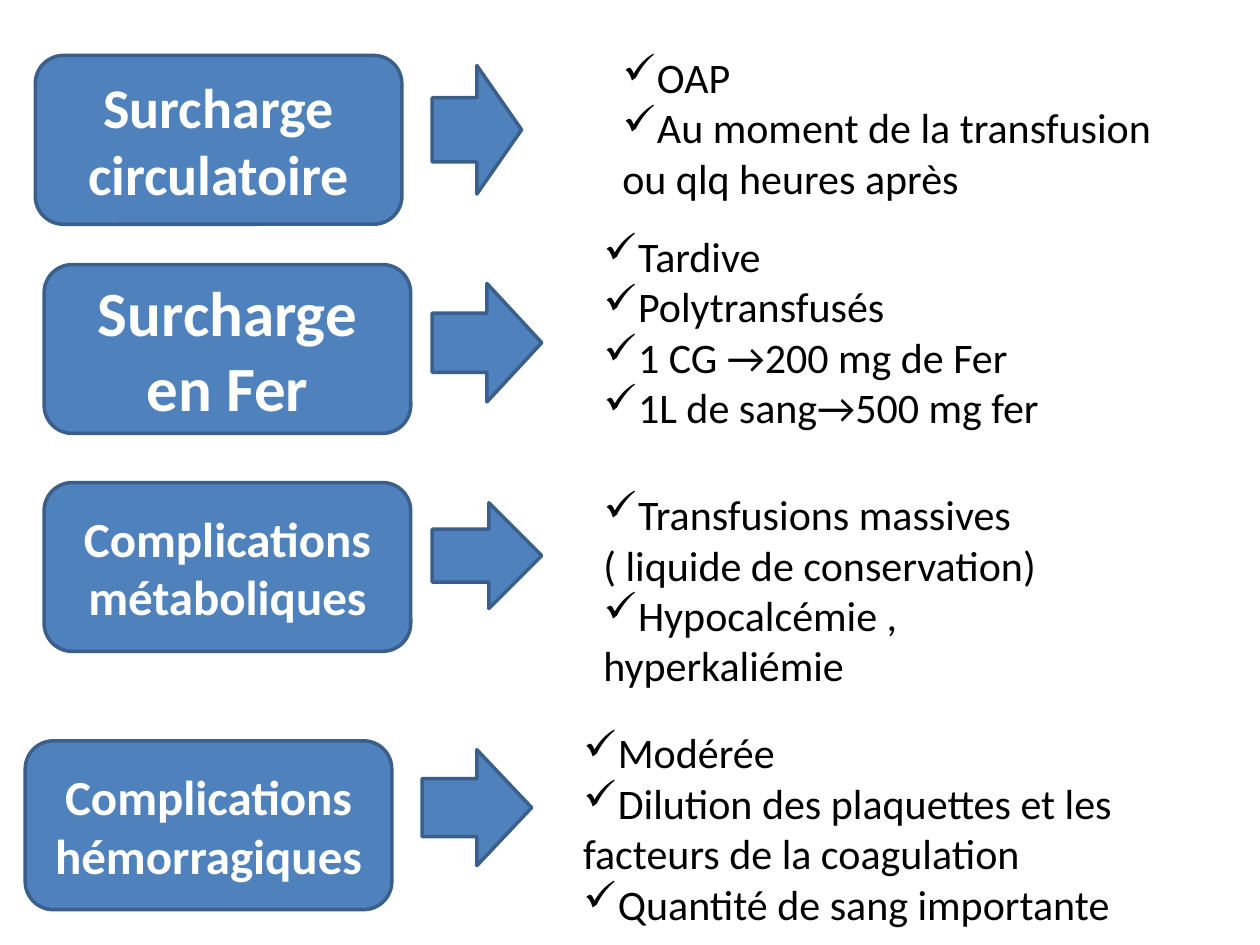
import pptx
import pptx.util
import pptx.dml.color
import pptx.enum.shapes
import pptx.enum.text
import pptx.oxml.ns
import lxml.etree

Inches = pptx.util.Inches
SHAPE = pptx.enum.shapes.MSO_SHAPE
ALIGN = pptx.enum.text.PP_ALIGN
ANCHOR = pptx.enum.text.MSO_ANCHOR

COLORS = {"fill": "4F81BD", "outline": "3A5F8C", "light": "FFFFFF", "dark": "000000"}
LABEL_WIDTH, LABEL_HEIGHT = 2.91, 1.34

# Each row: origin and label; arrow and notes boxes are relative to the origin
ROWS = [
    {"origin": (0.28, 0.44), "label": "Surcharge circulatoire", "size": 32,
     "arrow": (3.15, 0.08, 0.71, 1.02), "notes_box": (4.56, -0.08, 4.41, 1.62),
     "notes": ["OAP", "Au moment de la transfusion ou qlq heures après"]},
    {"origin": (0.35, 2.1), "label": "Surcharge en Fer", "size": 36,
     "arrow": (3.08, 0.15, 0.87, 0.94), "notes_box": (4.34, -0.32, 4.88, 1.72),
     "notes": ["Tardive", "Polytransfusés", "1 CG →200 mg de Fer",
               "1L de sang→500 mg fer"]},
    {"origin": (0.35, 3.83), "label": "Complications métaboliques", "size": 28,
     "arrow": (3.08, 0.16, 0.87, 0.84), "notes_box": (4.34, 0, 4.49, 2.32),
     "notes": ["Transfusions massives\v( liquide de conservation)",
               "Hypocalcémie , hyperkaliémie"]},
    {"origin": (0.2, 5.88), "label": "Complications hémorragiques", "size": 28,
     "arrow": (3.15, 0.07, 0.87, 0.92), "notes_box": (4.33, -0.16, 4.8, 1.72),
     "notes": ["Modérée",
               "Dilution des plaquettes et les facteurs de la coagulation",
               "Quantité de sang importante"]},
]


def rgb(name):
    return pptx.dml.color.RGBColor.from_string(COLORS[name])


def add_check_bullet(paragraph):
    properties = paragraph._p.get_or_add_pPr()
    properties.set("marL", "0")
    properties.set("indent", "0")
    qualified = pptx.oxml.ns.qn
    lxml.etree.SubElement(properties, qualified("a:buFont"), typeface="Wingdings", charset="2")
    # Wingdings draws this letter as a check mark
    lxml.etree.SubElement(properties, qualified("a:buChar"), char="ü")


def write_text(frame, lines, *, size, color, bold=False, align=ALIGN.LEFT,
               anchor=ANCHOR.TOP, bullet=False):
    frame.word_wrap = True
    frame.vertical_anchor = anchor
    for index, line in enumerate(lines):
        paragraph = frame.add_paragraph() if index else frame.paragraphs[0]
        paragraph.text = line
        paragraph.alignment = align
        if bullet:
            add_check_bullet(paragraph)
        for run in paragraph.runs:
            run.font.name = "Calibri"
            run.font.size = pptx.util.Pt(size)
            run.font.bold = bold
            run.font.color.rgb = rgb(color)


def add_block(slide, kind, box):
    shape = slide.shapes.add_shape(kind, *map(Inches, box))
    shape.shadow.inherit = False
    shape.fill.solid()
    shape.fill.fore_color.rgb = rgb("fill")
    shape.line.color.rgb = rgb("outline")
    shape.line.width = pptx.util.Pt(2)
    return shape


def add_row(slide, row):
    left, top = row["origin"]

    def place(box):
        return (left + box[0], top + box[1], box[2], box[3])

    # Complication label
    label = add_block(slide, SHAPE.ROUNDED_RECTANGLE,
                      place((0, 0, LABEL_WIDTH, LABEL_HEIGHT)))
    write_text(label.text_frame, [row["label"]], size=row["size"], color="light",
               bold=True, align=ALIGN.CENTER, anchor=ANCHOR.MIDDLE)

    # Arrow to the notes
    add_block(slide, SHAPE.RIGHT_ARROW, place(row["arrow"]))

    # Checked notes
    notes = slide.shapes.add_textbox(*map(Inches, place(row["notes_box"])))
    write_text(notes.text_frame, row["notes"], size=24, color="dark", bullet=True)


def main():
    presentation = pptx.Presentation()
    presentation.slide_width = Inches(10)
    presentation.slide_height = Inches(7.5)
    slide = presentation.slides.add_slide(presentation.slide_layouts[6])
    for row in ROWS:
        add_row(slide, row)
    presentation.save("out.pptx")


if __name__ == "__main__":
    main()
